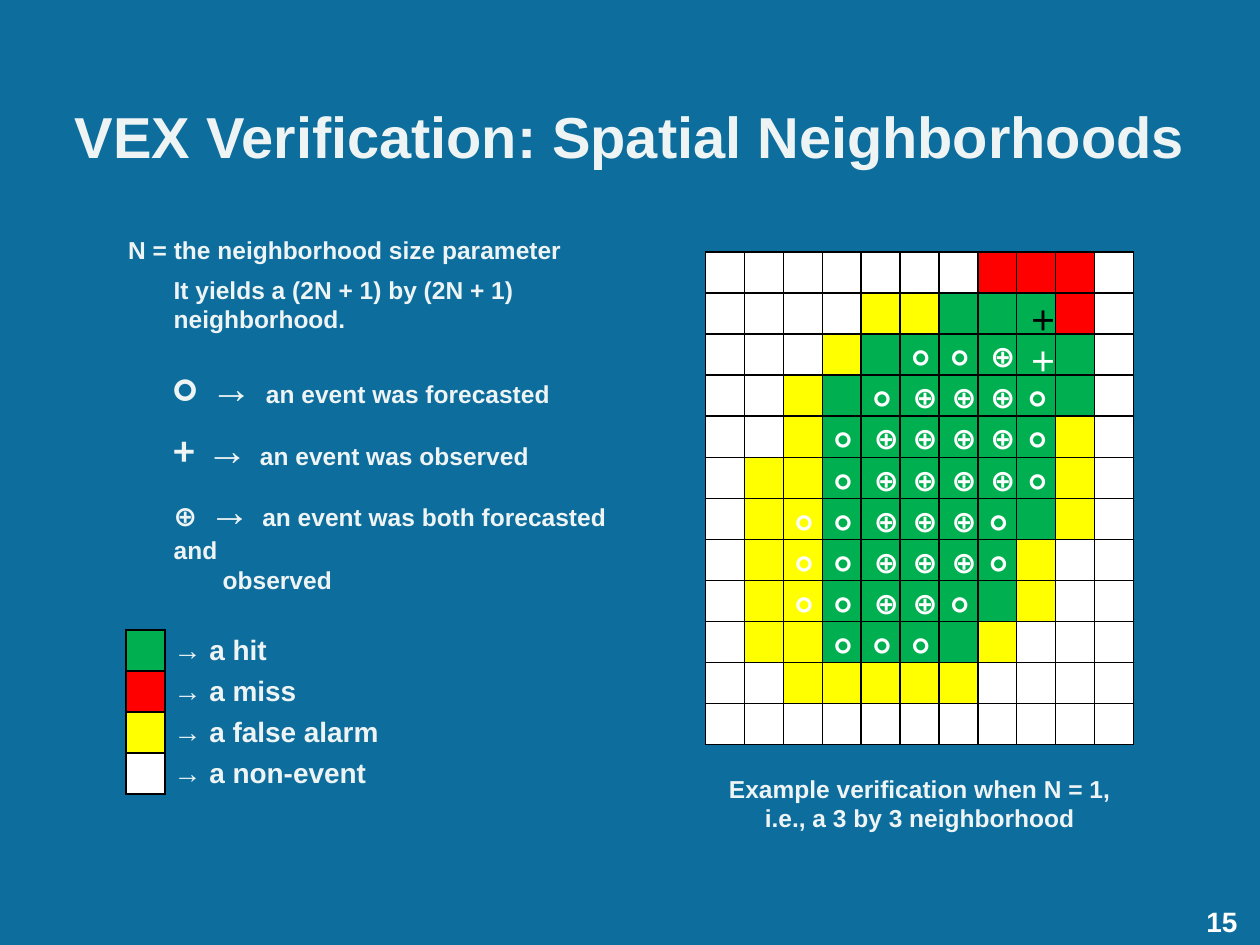
from dataclasses import dataclass

from lxml import etree
from pptx import Presentation
from pptx.dml.color import RGBColor
from pptx.enum.text import MSO_ANCHOR, PP_ALIGN
from pptx.oxml.ns import qn
from pptx.util import Pt

LEFT, CENTER = PP_ALIGN.LEFT, PP_ALIGN.CENTER
TOP, MIDDLE = MSO_ANCHOR.TOP, MSO_ANCHOR.MIDDLE


@dataclass(frozen=True)
class Theme:
    background: str = "0D6E9E"
    text: str = "EEF4F4"
    white: str = "FFFFFF"
    black: str = "000000"
    font: str = "Arial"
    symbol_font: str = "Calibri"
    title: int = 33
    body: int = 14
    label: int = 16
    arrow: int = 24
    wide_gap: int = 28
    mark: int = 17
    plus_mark: int = 16


THEME = Theme()

# Content
TITLE = "VEX Verification: Spatial Neighborhoods"
PAGE_NUMBER = "15"
CAPTION = "Example verification when N = 1, i.e., a 3 by 3 neighborhood"
OUTCOMES = {  # grid letter: (colour, legend wording)
    "H": ("00B050", "a hit"),
    "M": ("FF0000", "a miss"),
    "F": ("FFFF00", "a false alarm"),
    "W": ("FFFFFF", "a non-event"),
}
OUTCOME_GRID = [
    "WWWWWWWMMMW",
    "WWWWFFHHHMW",
    "WWWFHHHHHHW",
    "WWFHHHHHHHW",
    "WWFHHHHHHFW",
    "WFFHHHHHHFW",
    "WFFHHHHHHFW",
    "WFFHHHHHFWW",
    "WFFHHHHHFWW",
    "WFFHHHHFWWW",
    "WWFFFFFWWWW",
    "WWWWWWWWWWW",
]
MARK_GRID = [
    "...........",
    "........＋..",
    ".....○○⊕＋..",
    "....○⊕⊕⊕○..",
    "...○⊕⊕⊕⊕○..",
    "...○⊕⊕⊕⊕○..",
    "..○○⊕⊕⊕○...",
    "..○○⊕⊕⊕○...",
    "..○○⊕⊕○....",
    "...○○○.....",
    "...........",
    "...........",
]
BLACK_MARK = (1, 8)
# Each paragraph: indent, space after, runs of (text, size, font)
EXPLANATION = [
    (0, 6, [("N = the neighborhood size parameter", THEME.body, THEME.font)]),
    (26, 12, [("It yields a (2N + 1) by (2N + 1) neighborhood.", THEME.body, THEME.font)]),
    (26, 6, [("○", THEME.arrow, THEME.symbol_font), (" ", THEME.wide_gap, THEME.font),
             ("→", THEME.arrow, THEME.font), (" ", THEME.wide_gap, THEME.font),
             ("an event was forecasted", THEME.body, THEME.font)]),
    (26, 6, [("+", THEME.arrow, THEME.symbol_font), (" → ", THEME.arrow, THEME.font),
             ("an event was observed", THEME.body, THEME.font)]),
    (26, 0, [("⊕", THEME.label, THEME.symbol_font), (" → ", THEME.arrow, THEME.font),
             ("an event was both forecasted and", THEME.body, THEME.font)]),
    (54, 6, [("observed", THEME.body, THEME.font)]),
]

# Layout
CELL_W, CELL_H = 22.25, 23.46
GRID_LEFT, GRID_TOP = 403.2, 144
LEGEND_LEFT, LEGEND_TOP = 72, 360


def write(paragraph, text, *, size=THEME.body, font=THEME.font, color=THEME.text,
          align=LEFT, line=None, indent=0, after=0):
    """Append one bold run to a paragraph and format both."""
    paragraph.alignment = align
    paragraph.space_after = Pt(after)
    if line:
        paragraph.line_spacing = line
    if indent:
        paragraph._p.get_or_add_pPr().set("marL", str(Pt(indent)))
    run = paragraph.add_run()
    run.text = text
    run.font.size, run.font.name, run.font.bold = Pt(size), font, True
    run.font.color.rgb = RGBColor.from_string(color)


def add_frame(slide, left, top, width, height, anchor=TOP):
    frame = slide.shapes.add_textbox(Pt(left), Pt(top), Pt(width), Pt(height)).text_frame
    frame.word_wrap = True
    frame.vertical_anchor = anchor
    return frame


def add_border(cell):
    properties = cell._tc.get_or_add_tcPr()
    for position, side in enumerate(("a:lnL", "a:lnR", "a:lnT", "a:lnB")):
        edge = etree.Element(qn(side), w=str(Pt(1)))
        fill = etree.SubElement(edge, qn("a:solidFill"))
        etree.SubElement(fill, qn("a:srgbClr"), val=THEME.black)
        properties.insert(position, edge)


def add_grid(slide, outcomes, left, top):
    """Add a bordered table coloured by outcome letter."""
    rows, columns = len(outcomes), len(outcomes[0])
    grid = slide.shapes.add_table(rows, columns, Pt(left), Pt(top),
                                  Pt(CELL_W * columns), Pt(CELL_H * rows)).table
    grid.first_row = grid.horz_banding = False
    for column in grid.columns:
        column.width = Pt(CELL_W)
    for r, letters in enumerate(outcomes):
        grid.rows[r].height = Pt(CELL_H)
        for c, letter in enumerate(letters):
            cell = grid.cell(r, c)
            cell.margin_top = cell.margin_bottom = 0
            cell.vertical_anchor = MIDDLE
            cell.fill.solid()
            cell.fill.fore_color.rgb = RGBColor.from_string(OUTCOMES[letter][0])
            add_border(cell)
    return grid


def main():
    deck = Presentation()
    deck.slide_width, deck.slide_height = Pt(720), Pt(540)
    slide = deck.slides.add_slide(deck.slide_layouts[6])
    slide.background.fill.solid()
    slide.background.fill.fore_color.rgb = RGBColor.from_string(THEME.background)

    # Page number and title
    number = add_frame(slide, 660, 515.5, 60, 24.5)
    number.margin_left = Pt(29.4)
    write(number.paragraphs[0], PAGE_NUMBER, size=THEME.label, color=THEME.white, line=0.9)
    title = add_frame(slide, 32.4, 54, 655.2, 47.5)
    write(title.paragraphs[0], TITLE, size=THEME.title, align=CENTER)

    # Verification grid with event marks
    verification = add_grid(slide, OUTCOME_GRID, GRID_LEFT, GRID_TOP)
    for r, marks in enumerate(MARK_GRID):
        for c, mark in enumerate(marks):
            if mark != ".":
                write(verification.cell(r, c).text_frame.paragraphs[0], mark,
                      size=THEME.plus_mark if mark == "＋" else THEME.mark,
                      font=THEME.symbol_font, align=CENTER, line=1.15,
                      color=THEME.black if (r, c) == BLACK_MARK else THEME.white)

    # Explanation of N and the symbols
    explanation = add_frame(slide, 66.2, 138.2, 295.2, 197.3, MIDDLE)
    for i, (indent, after, runs) in enumerate(EXPLANATION):
        paragraph = explanation.add_paragraph() if i else explanation.paragraphs[0]
        for text, size, font in runs:
            write(paragraph, text, size=size, font=font, indent=indent, after=after)

    # Colour legend
    add_grid(slide, list(OUTCOMES), LEGEND_LEFT, LEGEND_TOP)
    for i, (_, meaning) in enumerate(OUTCOMES.values()):
        label = add_frame(slide, 92.2, LEGEND_TOP + i * CELL_H, 144, 23)
        write(label.paragraphs[0], f"→ {meaning}", size=THEME.label, line=0.9)

    # Grid caption
    caption = add_frame(slide, GRID_LEFT, 438.5, CELL_W * len(OUTCOME_GRID[0]), 41)
    write(caption.paragraphs[0], CAPTION, align=CENTER, after=12)

    deck.save("out.pptx")


if __name__ == "__main__":
    main()
